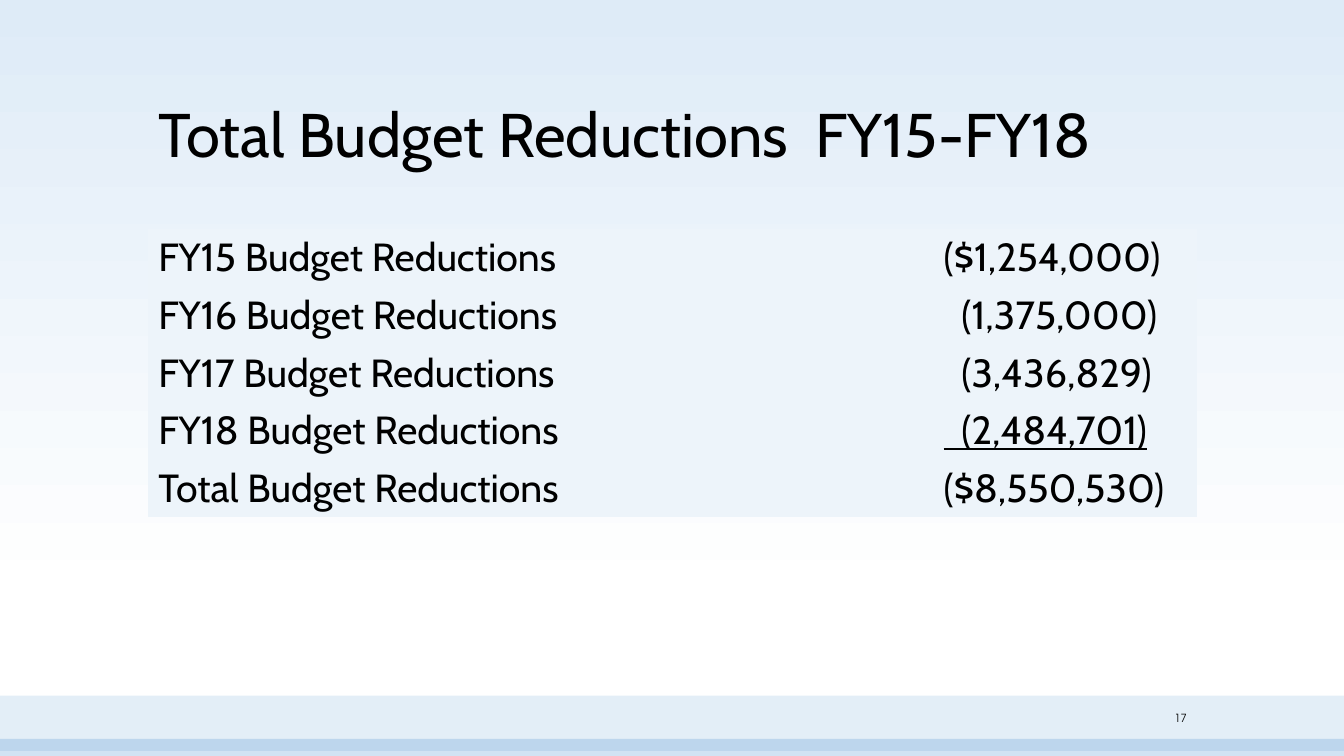
from pptx import Presentation
from pptx.dml.color import RGBColor
from pptx.enum.shapes import MSO_SHAPE
from pptx.enum.text import MSO_ANCHOR, PP_ALIGN
from pptx.oxml.ns import qn
from pptx.util import Inches, Pt
from lxml import etree

RECT = MSO_SHAPE.RECTANGLE
LEFT, RIGHT = PP_ALIGN.LEFT, PP_ALIGN.RIGHT
BOTTOM, MIDDLE = MSO_ANCHOR.BOTTOM, MSO_ANCHOR.MIDDLE
PLAIN = "{2D5ABB26-0587-4C30-8999-92F81FD0307C}"  # table style without borders


def color(code):
    return RGBColor.from_string(code)


def write(frame, text, size, name="Cabin", align=LEFT, line=False):
    para = frame.paragraphs[0]
    para.alignment = align
    run = para.add_run()
    run.text = text
    look = {"size": Pt(size), "name": name, "underline": line}
    for key, value in look.items():
        setattr(run.font, key, value)
    run.font.color.rgb = color("000000")


deck = Presentation()
deck.slide_width, deck.slide_height = Inches(13.33), Inches(7.5)
slide = deck.slides.add_slide(deck.slide_layouts[5])

# Background fading to white
back = slide.background.fill
back.gradient()
back.gradient_angle = 270
for stop, (place, code) in zip(back.gradient_stops, [(0, "DEEBF7"), (0.79, "FFFFFF")]):
    stop.position = place
    stop.color.rgb = color(code)

# Translucent footer bands
for top, height, alpha in [(6.9, 0.55, 17), (7.33, 0.17, 28)]:
    band = slide.shapes.add_shape(RECT, 0, Inches(top), Inches(13.33), Inches(height))
    band.shadow.inherit = False
    band.line.fill.background()
    band.fill.solid()
    band.fill.fore_color.rgb = color("5B9BD5")
    tint = band.fill._xPr.find(".//" + qn("a:srgbClr"))
    etree.SubElement(tint, qn("a:alpha"), val=str(alpha * 1000))

# Title
title = slide.shapes.title
title.left, title.top = Inches(1.47), Inches(0.55)
title.width, title.height = Inches(10.4), Inches(1.19)
title.text_frame.vertical_anchor = BOTTOM
write(title.text_frame, "Total Budget Reductions  FY15-FY18", 44)
title.text_frame.paragraphs[0].line_spacing = 0.9

# Reductions by year; the rule under FY18 starts at its leading spaces
rows = [
    ("FY15", "($1,254,000)"),
    ("FY16", "  (1,375,000)"),
    ("FY17", "  (3,436,829)"),
    ("FY18", "  (2,484,701)"),
    ("Total", "($8,550,530)"),
]
grid = slide.shapes.add_table(
    len(rows), 2, Inches(1.47), Inches(2.27), Inches(10.4), Inches(0.57 * len(rows))
).table
grid.first_row = grid.horz_banding = False
grid._tbl.tblPr.find(qn("a:tableStyleId")).text = PLAIN
for col, width in zip(grid.columns, [7.79, 2.61]):
    col.width = Inches(width)
for r, (year, amount) in enumerate(rows):
    for c, text in enumerate([year + " Budget Reductions", amount]):
        cell = grid.cell(r, c)
        cell.fill.solid()
        cell.fill.fore_color.rgb = color("EDF4FA")
        write(cell.text_frame, text, 28, line=year == "FY18" and c == 1)

# Page number
page = slide.shapes.add_textbox(Inches(11.17), Inches(6.99), Inches(0.7), Inches(0.26))
page.text_frame.word_wrap = True
page.text_frame.vertical_anchor = MIDDLE
write(page.text_frame, "17", 8, "TeX Gyre Adventor", RIGHT)

deck.save("out.pptx")
